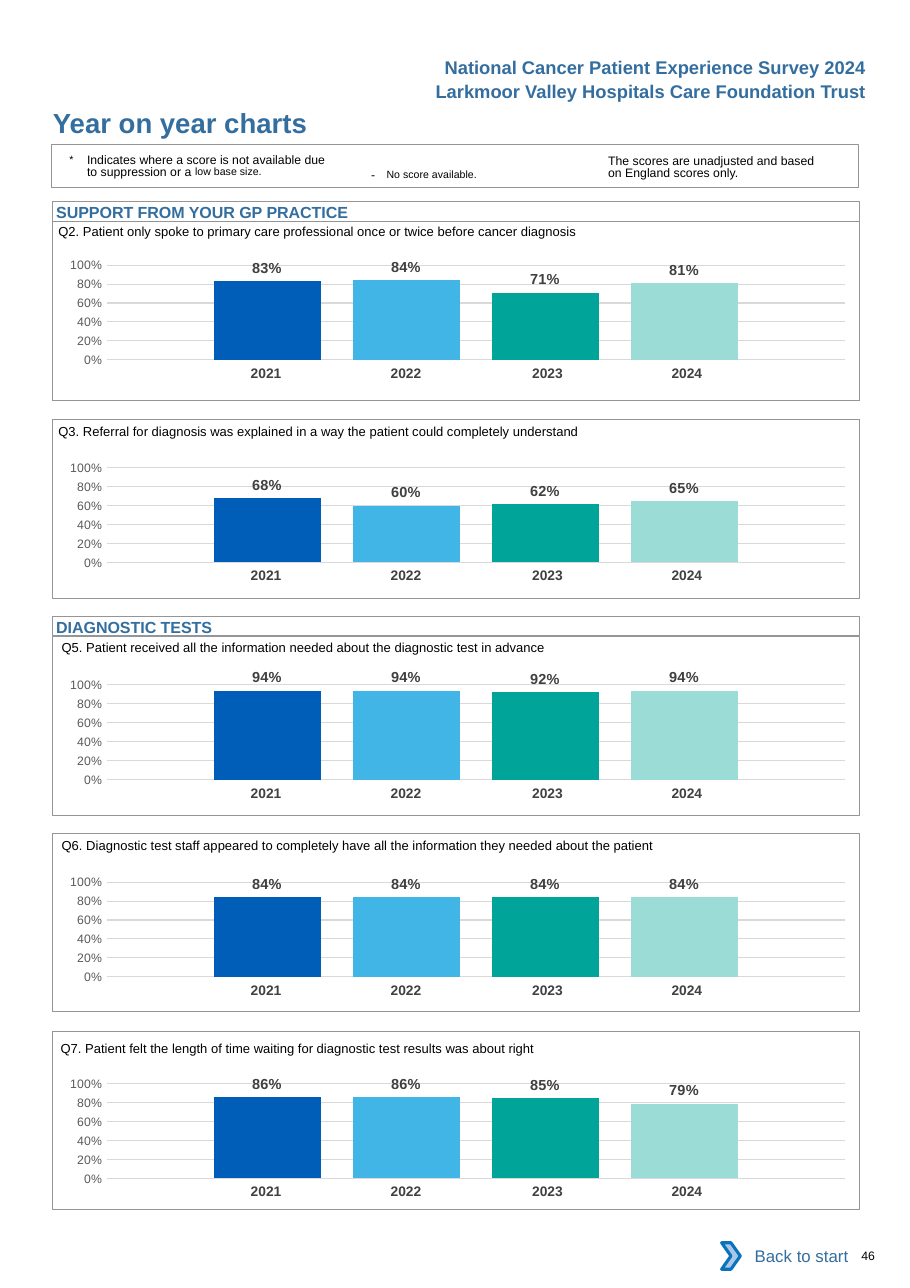
from lxml import etree
from pptx import Presentation
from pptx.chart.data import CategoryChartData
from pptx.dml.color import RGBColor
from pptx.enum.chart import XL_CHART_TYPE, XL_LABEL_POSITION, XL_TICK_MARK
from pptx.enum.shapes import MSO_SHAPE
from pptx.enum.text import MSO_ANCHOR, PP_ALIGN
from pptx.oxml import parse_xml
from pptx.oxml.ns import nsdecls, qn
from pptx.util import Inches, Pt

COLUMN = XL_CHART_TYPE.COLUMN_CLUSTERED
OUTSIDE = XL_LABEL_POSITION.OUTSIDE_END
NO_TICK = XL_TICK_MARK.NONE
RECT, CHEVRON = MSO_SHAPE.RECTANGLE, MSO_SHAPE.CHEVRON
TOP, MIDDLE = MSO_ANCHOR.TOP, MSO_ANCHOR.MIDDLE
LEFT, CENTER, RIGHT = PP_ALIGN.LEFT, PP_ALIGN.CENTER, PP_ALIGN.RIGHT

BLACK = RGBColor(0x00, 0x00, 0x00)
WHITE = RGBColor(0xFF, 0xFF, 0xFF)
BLUE = RGBColor(0x33, 0x6E, 0x9F)
GREY = RGBColor(0x93, 0x95, 0x98)
GRID = RGBColor(0xD9, 0xD9, 0xD9)
AXIS = RGBColor(0x59, 0x59, 0x59)
LABEL = RGBColor(0x40, 0x40, 0x40)
YEAR = RGBColor(0x41, 0x40, 0x42)
ARROW = RGBColor(0xA8, 0xC7, 0xE9)
EDGE = RGBColor(0x0A, 0x74, 0xBB)
BARS = (RGBColor(0x00, 0x5E, 0xB8), RGBColor(0x41, 0xB6, 0xE6),
        RGBColor(0x00, 0xA4, 0x99), RGBColor(0x9C, 0xDC, 0xD7))

YEARS = ("2021", "2022", "2023", "2024")
COLS = ((1.27, 0), (1.27, 0), (1.34, 0.04), (1.27, 0.12))
PLOT = {"x": 0.079, "y": 0.145, "w": 0.915, "h": 0.666}
PLAIN_GRID = "{2D5ABB26-0587-4C30-8999-92F81FD0307C}"
SECTIONS = ((1.83, "SUPPORT FROM YOUR GP PRACTICE"), (5.59, "DIAGNOSTIC TESTS"))
QUESTIONS = (
    (2.01, 2.22, 0.53, 1.94, (0.83, 0.84, 0.71, 0.81),
     "Q2. Patient only spoke to primary care professional once or twice "
     "before cancer diagnosis"),
    (3.81, 4.06, 0.53, 3.75, (0.68, 0.60, 0.62, 0.65),
     "Q3. Referral for diagnosis was explained in a way the patient could "
     "completely understand"),
    (5.78, 6.03, 0.56, 5.71, (0.94, 0.94, 0.92, 0.94),
     "Q5. Patient received all the information needed about the diagnostic "
     "test in advance"),
    (7.56, 7.82, 0.56, 7.51, (0.84, 0.84, 0.84, 0.84),
     "Q6. Diagnostic test staff appeared to completely have all the "
     "information they needed about the patient"),
    (9.36, 9.65, 0.55, 9.35, (0.86, 0.86, 0.85, 0.79),
     "Q7. Patient felt the length of time waiting for diagnostic test "
     "results was about right"),
)


def style(font, size, color, bold=False):
    """Set an Arial font."""
    font.name, font.size, font.bold = "Arial", Pt(size), bold
    font.color.rgb = color


def write(shape, text, size, color, bold=False, align=LEFT,
          inset=(0, 0, 0, 0), anchor=TOP, wrap=True):
    """Fill a shape with one paragraph and return it."""
    frame = shape.text_frame
    frame.word_wrap, frame.vertical_anchor = wrap, anchor
    (frame.margin_left, frame.margin_top, frame.margin_right,
     frame.margin_bottom) = map(Inches, inset)
    para = frame.paragraphs[0]
    para.text, para.alignment = text, align
    style(para.font, size, color, bold)
    return para


def add_text(slide, box, *args, **options):
    """Add a text box and return its paragraph."""
    return write(slide.shapes.add_textbox(*map(Inches, box)), *args, **options)


def add_box(slide, box, line=None, width=0.5, fill=None, kind=RECT):
    """Add a flat preset shape."""
    shape = slide.shapes.add_shape(kind, *map(Inches, box))
    shape.shadow.inherit = False
    if fill is None:
        shape.fill.background()
    else:
        shape.fill.solid()
        shape.fill.fore_color.rgb = fill
    if line is None:
        shape.line.fill.background()
    else:
        shape.line.color.rgb, shape.line.width = line, Pt(width)
    return shape


def add_raised(para, text, shift):
    """Append a run lifted by a percentage of its size."""
    run = para.add_run()
    run.text, run.font.size = text, Pt(12)
    run.font._element.set("baseline", str(shift * 1000))


def add_run(para, text, gap=0):
    """Append a run in the paragraph font with letter spacing in points."""
    run = para.add_run()
    run.text = text
    run.font._element.set("spc", str(round(gap * 100)))


def add_years(slide, top):
    """Add the row of years below a chart."""
    width = sum(col for col, _ in COLS)
    frame = slide.shapes.add_table(
        1, len(YEARS), *map(Inches, (1.73, top, width, 0.27)))
    table = frame.table
    table.first_row = table.horz_banding = False
    next(frame._element.iter(qn("a:tableStyleId"))).text = PLAIN_GRID
    table.rows[0].height = Inches(0.27)
    for idx, (year, (col, right)) in enumerate(zip(YEARS, COLS)):
        table.columns[idx].width = Inches(col)
        cell = table.cell(0, idx)
        cell.fill.background()
        cell.margin_left, cell.margin_right = Inches(0.1), Inches(right)
        para = cell.text_frame.paragraphs[0]
        para.text, para.alignment = year, CENTER
        style(para.font, 9, YEAR, True)


def place_plot(chart):
    """Pin the inner plot area to fixed fractions of the chart."""
    area = chart._chartSpace.chart.plotArea
    for old in area.findall(qn("c:layout")):
        area.remove(old)
    layout = parse_xml(f"<c:layout {nsdecls('c')}/>")
    manual = etree.SubElement(layout, qn("c:manualLayout"))
    parts = {"layoutTarget": "inner", "xMode": "edge", "yMode": "edge", **PLOT}
    for tag, val in parts.items():
        etree.SubElement(manual, qn(f"c:{tag}")).set("val", str(val))
    area.insert(0, layout)


def add_scores(slide, top, scores):
    """Add a column chart with one series per year."""
    data = CategoryChartData(number_format="0%")
    data.categories = ["1"]
    for idx, score in enumerate(scores, 1):
        data.add_series(f"Series {idx}", [score])
    chart = slide.shapes.add_chart(
        COLUMN, *map(Inches, (0.39, top, 7.32, 1.29)), data).chart
    chart.has_legend = chart.has_title = False
    chart.font.name, chart.font.size = "Calibri", Pt(10)
    chart.font.color.rgb = BLACK
    chart.category_axis.visible = False
    axis = chart.value_axis
    axis.minimum_scale, axis.maximum_scale, axis.major_unit = 0, 1, 0.2
    axis.major_tick_mark = axis.minor_tick_mark = NO_TICK
    axis.format.line.fill.background()
    axis.major_gridlines.format.line.color.rgb = GRID
    axis.major_gridlines.format.line.width = Pt(0.75)
    axis.tick_labels.number_format = "0%"
    axis.tick_labels.number_format_is_linked = False
    style(axis.tick_labels.font, 8, AXIS)
    plot = chart.plots[0]
    plot.gap_width, plot.overlap, plot.vary_by_categories = 200, -30, False
    for series, color in zip(plot.series, BARS):
        series.format.fill.solid()
        series.format.fill.fore_color.rgb = color
        labels = series.data_labels
        labels.show_value, labels.position = True, OUTSIDE
        labels.number_format, labels.number_format_is_linked = "0%", False
        style(labels.font, 9.5, LABEL, True)
    place_plot(chart)


def add_notes(slide):
    """Add the framed notes on the scores."""
    para = add_text(slide, (5.52, 1.38, 2.01, 0.27),
                    "The scores are unadjusted and based on England scores only.",
                    8, BLACK, inset=(0, 0.03, 0, 0))
    para.line_spacing = Pt(8.1)
    para = add_text(slide, (3.27, 1.41, 1.83, 0.24), "", 8, BLACK,
                    inset=(0.1, 0.05, 0.1, 0.05))
    add_run(para, "- ", 2.6)
    add_raised(para, "No score available.", 3)
    para = add_text(slide, (0.63, 1.38, 2.38, 0.27), "", 8, BLACK,
                    inset=(0, 0.03, 0, 0))
    para.line_spacing = Pt(8.1)
    indent = para._p.get_or_add_pPr()
    indent.set("marL", str(Inches(0.16)))
    indent.set("indent", str(-Inches(0.16)))
    add_raised(para, "*\t", 3)
    add_run(para, "Indicates where a score is not available due to suppression or a ")
    add_raised(para, "low base size.", 7)
    add_box(slide, (0.47, 1.31, 7.32, 0.39), GREY, 0.75)


def main():
    """Build the page."""
    deck = Presentation()
    deck.slide_width, deck.slide_height = Inches(8.26), Inches(11.69)
    slide = deck.slides.add_slide(deck.slide_layouts[5])
    title = slide.shapes.title
    title.left, title.top, title.width, title.height = map(
        Inches, (0.47, 0.96, 4.5, 0.3))
    write(title, "Year on year charts", 18, BLUE, True, inset=(0.01, 0, 0, 0))
    for top, text in ((0.46, "National Cancer Patient Experience Survey 2024"),
                      (0.68, "Larkmoor Valley Hospitals Care Foundation Trust")):
        add_text(slide, (3.74, top, 4.22, 0.3), text, 12, BLUE, True, RIGHT,
                 (0.1, 0.05, 0.1, 0.05), wrap=False)
    add_notes(slide)
    for top, text in SECTIONS:
        write(add_box(slide, (0.48, top, 7.32, 0.18), GREY), text, 10.5, BLUE,
              True, inset=(0.03, 0.01, 0, 0))
    for panel, chart, left, top, scores, text in QUESTIONS:
        add_text(slide, (left, top, 7.2, 0.24), text, 8.5, BLACK,
                 inset=(0, 0.09, 0, 0))
        add_years(slide, chart + 1.05)
        add_scores(slide, chart, scores)
        add_box(slide, (0.48, panel, 7.32, 1.62), GREY)
    write(add_box(slide, (6.62, 11.19, 1.18, 0.42), fill=WHITE),
          "Back to start", 11, BLUE, align=RIGHT,
          inset=(0.1, 0.05, 0.1, 0.05), anchor=MIDDLE)
    add_box(slide, (6.55, 11.28, 0.17, 0.24), EDGE, 2, ARROW, CHEVRON)
    add_text(slide, (7.72, 11.33, 0.51, 0.13), "46", 8, BLACK,
             inset=(0.1, 0, 0, 0))
    deck.save("out.pptx")


if __name__ == "__main__":
    main()
